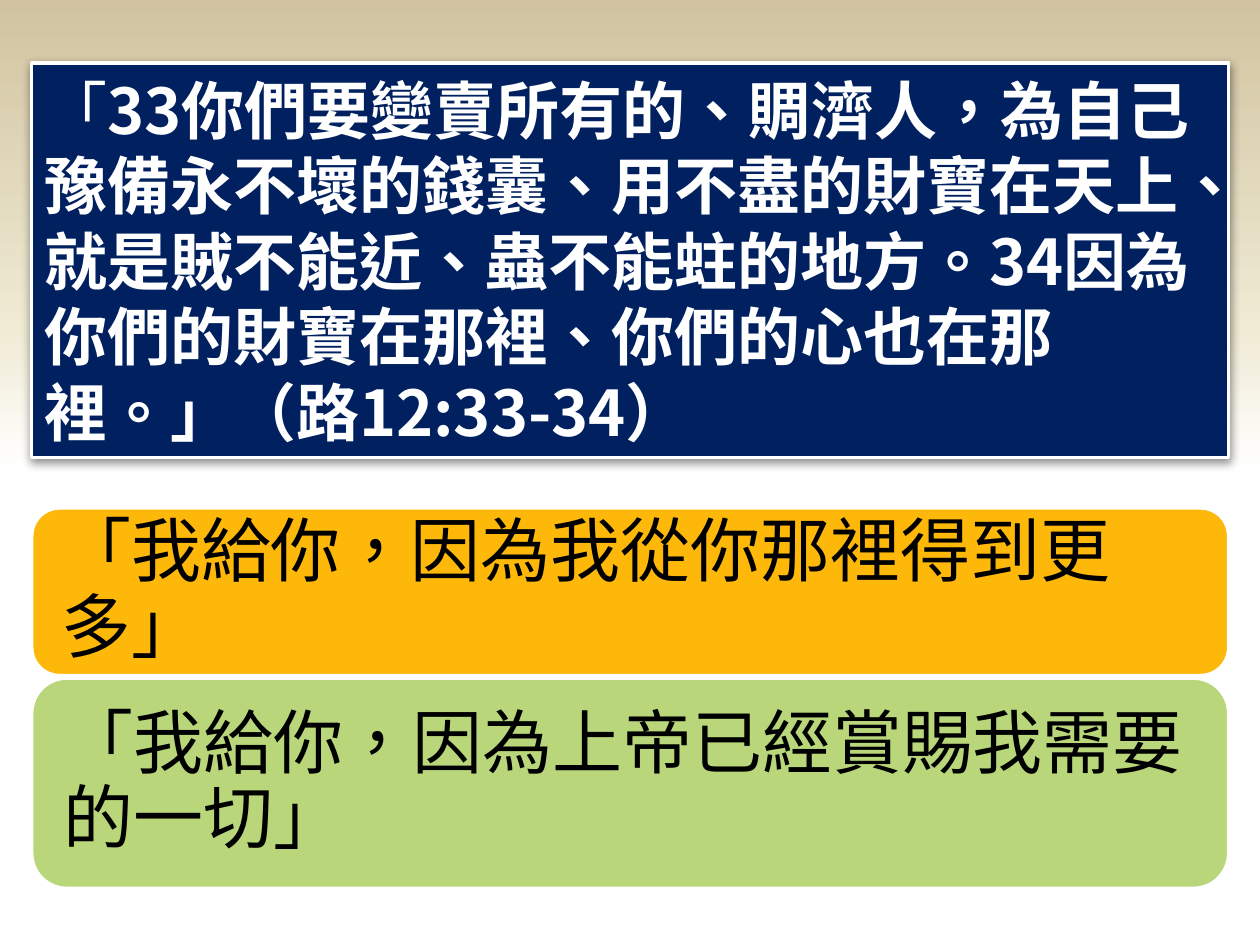
from copy import deepcopy
from dataclasses import dataclass

from pptx import Presentation, util as u
from pptx.dml.color import RGBColor
from pptx.enum import shapes as es, text as et
from pptx.oxml import parse_xml
from pptx.oxml.ns import nsdecls, qn

HUES = {"navy": "002060", "gold": "FEB80A", "green": "B9D77A",
        "white": "FFFFFF", "black": "000000", "cream": "F0EBD5", "tan": "D1C39F"}
CJK = "Noto Sans CJK SC"
LEFT, WIDTH = 0.64, 24.13
TOP, GAP = 10.24, 0.05
INSET = 0.0488


@dataclass
class Box:
    left: float
    top: float
    width: float
    height: float

    def cms(self) -> list:
        return [u.Cm(v) for v in (self.left, self.top, self.width, self.height)]

    def inner(self, pad: float) -> "Box":
        return Box(self.left + pad, self.top + pad,
                   self.width - 2 * pad, self.height - 2 * pad)


@dataclass
class Bar:
    words: str
    hue: str
    height: float


def rgb(hue: str) -> RGBColor:
    return RGBColor.from_string(HUES[hue])


def add_panel(host, kind, box: Box, hue: str):
    panel = host.add_shape(kind, *box.cms())
    panel.shadow.inherit = False
    panel.fill.solid()
    panel.fill.fore_color.rgb = rgb(hue)
    panel.line.color.rgb = rgb("white")
    panel.line.width = u.Pt(2)
    return panel


def set_frame(frame) -> None:
    frame.word_wrap = True
    frame.vertical_anchor = et.MSO_ANCHOR.MIDDLE
    frame.paragraphs[0].alignment = et.PP_ALIGN.LEFT


def add_run(para, words: str, size: int, face: str, hue: str, bold: bool = False) -> None:
    run = para.add_run()
    run.text = words
    run.font.size = u.Pt(size)
    run.font.bold = bold
    run.font.color.rgb = rgb(hue)
    run.font.name = face
    props = run._r.get_or_add_rPr()
    props.set("lang", "zh-TW")
    props.find(qn("a:latin")).addnext(
        parse_xml(f'<a:ea {nsdecls("a")} typeface="{CJK}"/>'))


def paint_back(slide) -> None:
    fill = slide.background.fill
    fill.gradient()
    fill.gradient_angle = 90
    stops = slide.element.find(".//" + qn("a:gsLst"))
    stops.append(deepcopy(stops[-1]))
    marks = ((0.5, "white"), (0.65, "cream"), (1, "tan"))
    for stop, (place, hue) in zip(fill.gradient_stops, marks):
        stop.position = place
        stop.color.rgb = rgb(hue)


def add_verse(slide) -> None:
    box = Box(LEFT, 1.27, WIDTH, 7.95)
    panel = add_panel(slide.shapes, es.MSO_SHAPE.RECTANGLE, box, "navy")
    panel._element.spPr.find(qn("a:effectLst")).append(parse_xml(
        f'<a:outerShdw {nsdecls("a")} blurRad="{u.Pt(5)}" dist="{u.Pt(2)}" '
        f'dir="5400000" rotWithShape="0"><a:srgbClr val="{HUES["black"]}">'
        '<a:alpha val="43000"/></a:srgbClr></a:outerShdw>'))
    set_frame(panel.text_frame)
    para = panel.text_frame.paragraphs[0]
    add_run(para, "「", 36, CJK, "white")
    add_run(para, "33你們要變賣所有的、賙濟人，為自己豫備永不壞的錢囊、用不盡的財寶在天上、"
            "就是賊不能近、蟲不能蛀的地方。34因為你們的財寶在那裡、你們的心也在那裡。」"
            "（路12:33-34）", 36, CJK, "white", True)


def add_bar(host, bar: Bar, top: float) -> None:
    box = Box(LEFT, top, WIDTH, bar.height)
    add_panel(host, es.MSO_SHAPE.ROUNDED_RECTANGLE, box, bar.hue)
    frame = host.add_textbox(*box.inner(bar.height * INSET).cms()).text_frame
    set_frame(frame)
    frame.margin_left = frame.margin_right = u.Cm(0.43)
    frame.margin_top = frame.margin_bottom = u.Cm(0.43)
    para = frame.paragraphs[0]
    para.line_spacing = 0.9
    add_run(para, bar.words, 40, "Arial", "black")


def main() -> None:
    deck = Presentation()
    deck.slide_width, deck.slide_height = u.Cm(25.4), u.Cm(19.05)
    slide = deck.slides.add_slide(deck.slide_layouts[6])
    paint_back(slide)
    add_verse(slide)
    group = slide.shapes.add_group_shape()
    top = TOP
    for bar in (Bar("「我給你，因為我從你那裡得到更多」", "gold", 3.38),
                Bar("「我給你，因為上帝已經賞賜我需要的一切」", "green", 4.24)):
        add_bar(group.shapes, bar, top)
        top += bar.height + GAP
    deck.save("out.pptx")


if __name__ == "__main__":
    main()
